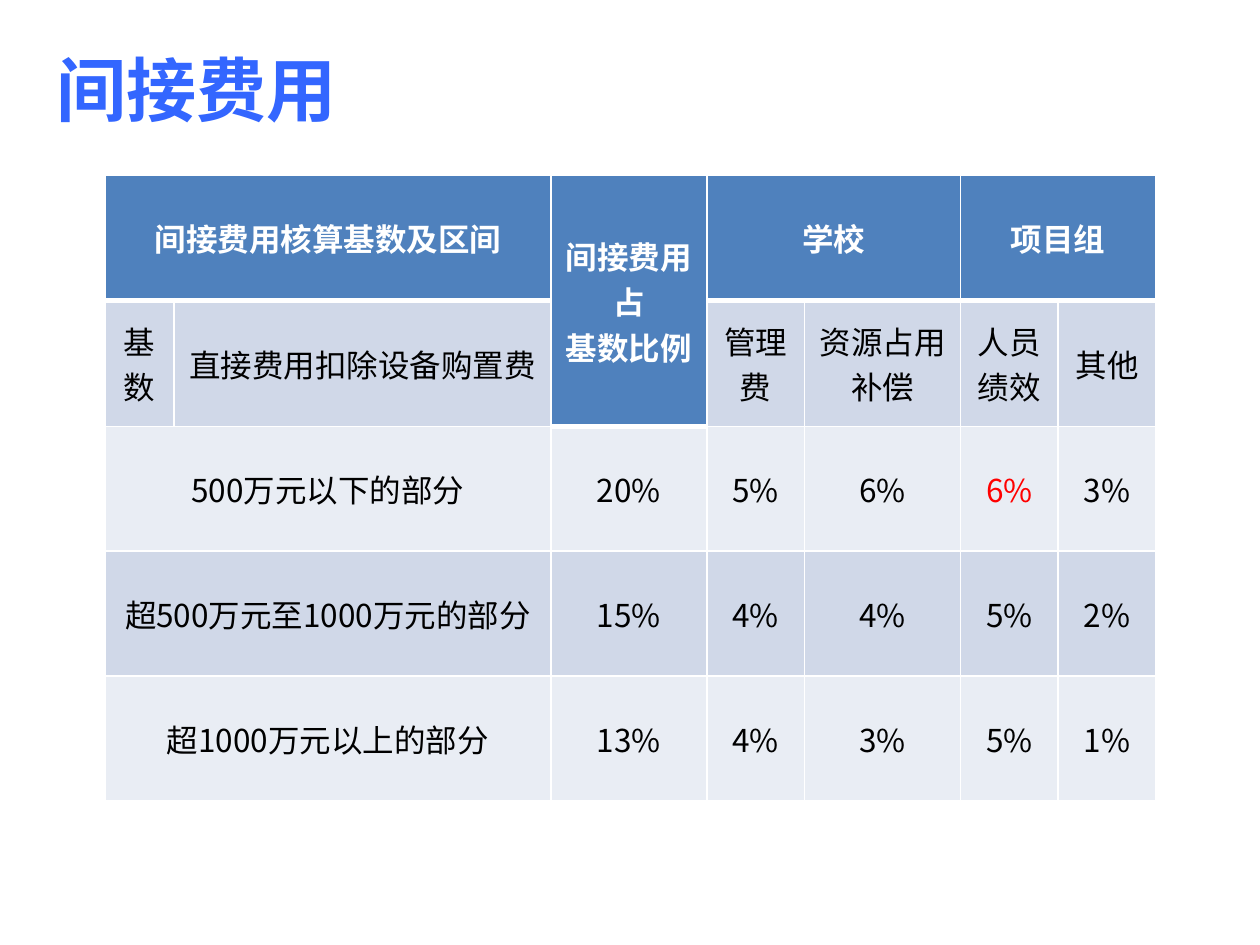
from dataclasses import dataclass

from lxml import etree
from pptx import Presentation
from pptx.dml.color import RGBColor
from pptx.enum.text import MSO_ANCHOR, MSO_AUTO_SIZE, PP_ALIGN
from pptx.oxml.ns import qn
from pptx.util import Pt

MIDDLE = MSO_ANCHOR.MIDDLE
CENTER, LEFT = PP_ALIGN.CENTER, PP_ALIGN.LEFT
FIT_SHAPE = MSO_AUTO_SIZE.SHAPE_TO_FIT_TEXT


@dataclass(frozen=True)
class Theme:
    font: str = "Noto Sans CJK SC"
    title_size: float = 40
    table_size: float = 18
    title: str = "3366FF"
    header: str = "4F81BD"
    bands: tuple = ("E9EDF4", "D0D8E8")
    line: str = "FFFFFF"
    header_text: str = "FFFFFF"
    text: str = "000000"
    accent: str = "FF0000"


THEME = Theme()

# None marks a cell covered by the merged cell before or above it
ROWS = [
    ["间接费用核算基数及区间", None, "间接费用占\n基数比例", "学校", None, "项目组", None],
    ["基数", "直接费用扣除设备购置费", None, "管理\n费", "资源占用\n补偿", "人员\n绩效", "其他"],
    ["500万元以下的部分", None, "20%", "5%", "6%", "6%", "3%"],
    ["超500万元至1000万元的部分", None, "15%", "4%", "4%", "5%", "2%"],
    ["超1000万元以上的部分", None, "13%", "4%", "3%", "5%", "1%"],
]
COL_WIDTHS = [39.4, 215.4, 89.2, 55.8, 89.2, 55.8, 55.8]
ROW_HEIGHT = 71.4
# First cell and last cell of each merged block
MERGES = [((0, 0), (0, 1)), ((0, 2), (1, 2)), ((0, 3), (0, 4)), ((0, 5), (0, 6)),
          ((2, 0), (2, 1)), ((3, 0), (3, 1)), ((4, 0), (4, 1))]
ACCENT_CELL = (2, 5)


def write_text(tf, text, size, color, bold=False, align=LEFT):
    """Write one paragraph for each line of text."""
    for i, line in enumerate(text.split("\n")):
        p = tf.paragraphs[0] if i == 0 else tf.add_paragraph()
        p.alignment = align
        r = p.add_run()
        r.text = line
        r.font.name = THEME.font
        r.font.size = Pt(size)
        r.font.bold = bold
        r.font.color.rgb = RGBColor.from_string(color)
        ea = etree.SubElement(r.font._element, qn("a:ea"))
        ea.set("typeface", THEME.font)


def add_title(s, text, left, top, width, height):
    tf = s.shapes.add_textbox(Pt(left), Pt(top), Pt(width), Pt(height)).text_frame
    tf.word_wrap = True
    tf.auto_size = FIT_SHAPE
    write_text(tf, text, THEME.title_size, THEME.title, bold=True)


def set_borders(cell, top=1, bottom=1):
    tc_pr = cell._tc.get_or_add_tcPr()
    edges = (("a:lnL", 1), ("a:lnR", 1), ("a:lnT", top), ("a:lnB", bottom))
    for i, (tag, width) in enumerate(edges):
        ln = etree.Element(qn(tag), w=str(Pt(width)))
        fill = etree.SubElement(ln, qn("a:solidFill"))
        etree.SubElement(fill, qn("a:srgbClr"), val=THEME.line)
        tc_pr.insert(i, ln)  # borders come before the fill


def add_rate_table(s, left, top):
    frame = s.shapes.add_table(len(ROWS), len(COL_WIDTHS), Pt(left), Pt(top),
                               Pt(sum(COL_WIDTHS)), Pt(ROW_HEIGHT * len(ROWS)))
    table = frame.table
    table.first_row = table.horz_banding = False
    for col, width in zip(table.columns, COL_WIDTHS):
        col.width = Pt(width)
    for row in table.rows:
        row.height = Pt(ROW_HEIGHT)
    for first, last in MERGES:
        table.cell(*first).merge(table.cell(*last))

    for i, row in enumerate(ROWS):
        for j, text in enumerate(row):
            if text is None:
                continue
            cell = table.cell(i, j)
            header = i == 0
            cell.fill.solid()
            cell.fill.fore_color.rgb = RGBColor.from_string(
                THEME.header if header else THEME.bands[i % 2])
            cell.vertical_anchor = MIDDLE
            # A thick line runs below the header, which is two rows tall in one column
            below_header = i == 1 or (i, j) == (2, 2)
            set_borders(cell, top=3 if below_header else 1, bottom=3 if header else 1)
            color = THEME.header_text if header else THEME.text
            if (i, j) == ACCENT_CELL:
                color = THEME.accent
            write_text(cell.text_frame, text, THEME.table_size, color,
                       bold=header, align=CENTER)


def main():
    prs = Presentation()
    prs.slide_width, prs.slide_height = Pt(720), Pt(540)
    s = prs.slides.add_slide(prs.slide_layouts[6])
    add_title(s, "间接费用", 25.2, 23, 408, 55.4)
    add_rate_table(s, 60, 100.2)
    prs.save("out.pptx")


if __name__ == "__main__":
    main()
